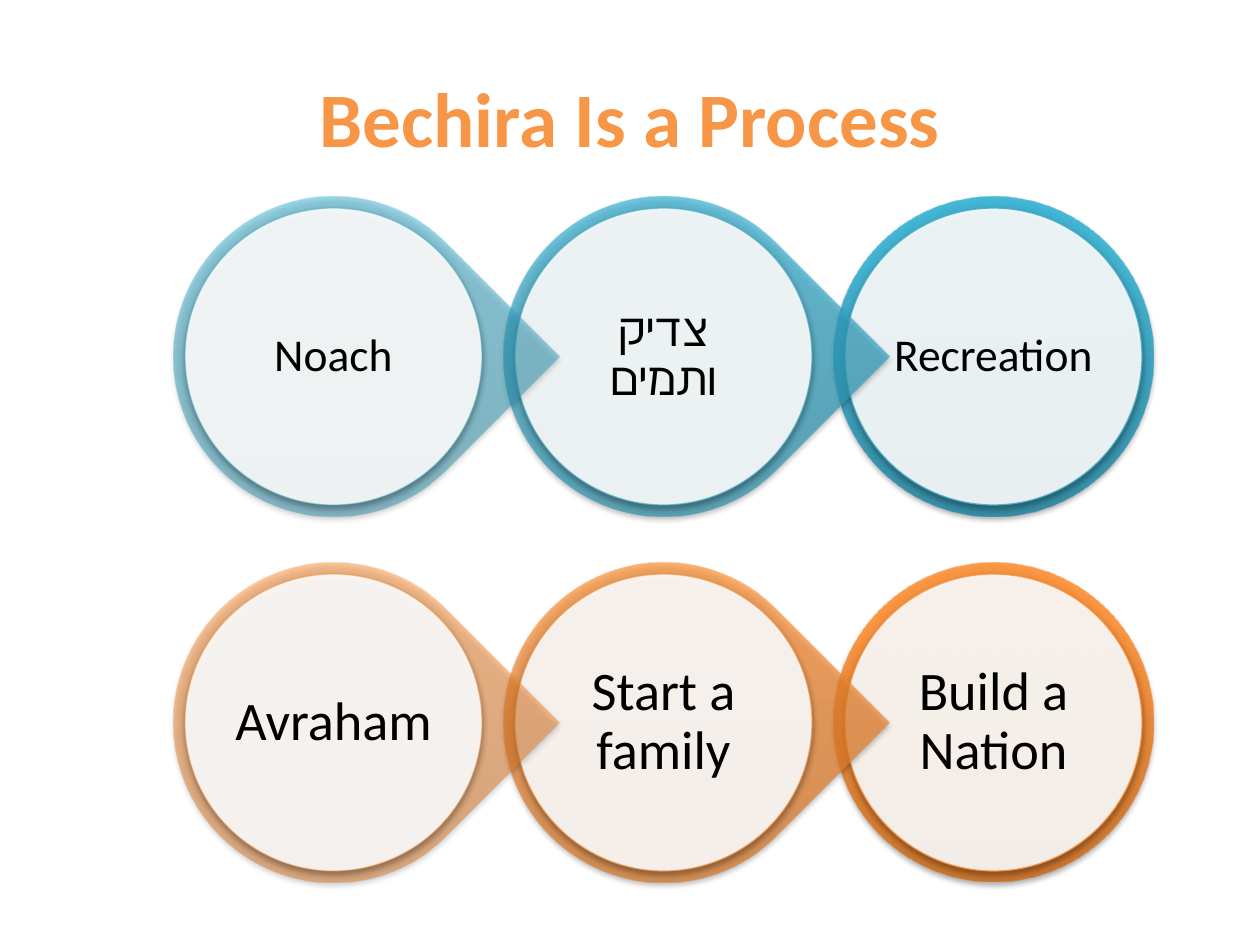
from dataclasses import dataclass

from lxml.etree import SubElement
from pptx import Presentation
from pptx.dml.color import RGBColor
from pptx.enum.shapes import MSO_SHAPE as Shape
from pptx.enum.text import MSO_ANCHOR as Anchor, PP_ALIGN as Align
from pptx.oxml import parse_xml
from pptx.oxml.ns import nsdecls, qn
from pptx.util import Emu, Pt


@dataclass(frozen=True)
class Theme:
    font: str = "Calibri"
    title: str = "F79646"
    text: str = "000000"
    face: str = "FFFFFF"
    title_size: int = 44
    # Line colour, then gradient from bottom to top
    teal: tuple = ("4BACC6", ("2A88A2", "37B1D2", "34B4D6"))
    orange: tuple = ("F79646", ("CC6E20", "FF9034", "FF9136"))


theme = Theme()
SCALE = 914400 / 126  # EMU per px


def box(*lengths):
    return [Emu(round(px * SCALE)) for px in lengths]


def add_shadow(shape):
    shape.shadow.inherit = False
    effects = shape._element.spPr.find(qn("a:effectLst"))
    effects.append(parse_xml(
        f'<a:outerShdw {nsdecls("a")} blurRad="40000" dist="23000" dir="5400000" '
        'rotWithShape="0"><a:srgbClr val="000000"><a:alpha val="35000"/>'
        '</a:srgbClr></a:outerShdw>'))


deck = Presentation()
deck.slide_width, deck.slide_height = box(1260, 945)
slide = deck.slides.add_slide(deck.slide_layouts[5])

# Title
title = slide.shapes.title
title.left, title.top, title.width, title.height = box(63, 38, 1134, 158)
title.text_frame.text = "Bechira Is a Process"
title.text_frame.vertical_anchor = Anchor.MIDDLE
heading = title.text_frame.paragraphs[0]
heading.alignment = Align.CENTER
font = heading.runs[0].font
font.name, font.size, font.bold = theme.font, Pt(theme.title_size), True
font.color.rgb = RGBColor.from_string(theme.title)

# Two processes: top, colours, type size, steps
processes = [
    (197, theme.teal, 26, ["Noach", "צדיק ותמים", "Recreation"]),
    (563, theme.orange, 31, ["Avraham", "Start a family", "Build a Nation"]),
]
LEFT, STEP, RING = 174, 330, 319
FACE_INSET, LABEL_INSET = 11, 53
opacities = [50, 70, 90]

for top, (edge, gradient), size, steps in processes:
    # Later steps lie behind the pointer of the step before
    for index, step in reversed(list(enumerate(steps))):
        left, opacity = LEFT + index * STEP, opacities[index] * 1000
        is_last = index == len(steps) - 1

        # Outer ring, pointing at the next step
        ring = slide.shapes.add_shape(
            Shape.OVAL if is_last else Shape.TEAR, *box(left, top, RING, RING))
        ring.rotation = 0 if is_last else 45
        stops = "".join(
            f'<a:gs pos="{pos}"><a:srgbClr val="{color}"><a:alpha val="{opacity}"/>'
            '</a:srgbClr></a:gs>'
            for pos, color in zip((0, 80000, 100000), gradient))
        ring._element.spPr.insert(2, parse_xml(
            f'<a:gradFill {nsdecls("a")} rotWithShape="0"><a:gsLst>{stops}</a:gsLst>'
            '<a:lin ang="16200000" scaled="0"/></a:gradFill>'))
        ring.line.fill.background()
        add_shadow(ring)

        # White face
        side = RING - 2 * FACE_INSET
        face = slide.shapes.add_shape(
            Shape.OVAL, *box(left + FACE_INSET, top + FACE_INSET, side, side))
        face.fill.solid()
        face.fill.fore_color.rgb = RGBColor.from_string(theme.face)
        face.line.color.rgb = RGBColor.from_string(edge)
        face.line.width = Pt(0.75)
        fill_color, line_color = face._element.spPr.iter(qn("a:srgbClr"))
        SubElement(fill_color, qn("a:alpha"), val="90000")
        SubElement(line_color, qn("a:alpha"), val=str(opacity))
        add_shadow(face)

        # Step name
        side = RING - 2 * LABEL_INSET
        label = slide.shapes.add_textbox(
            *box(left + LABEL_INSET, top + LABEL_INSET, side, side)).text_frame
        label.word_wrap = True
        label.vertical_anchor = Anchor.MIDDLE
        label.margin_left, label.margin_top, label.margin_right, label.margin_bottom = box(5, 5, 5, 5)
        label.text = step
        name = label.paragraphs[0]
        name.alignment = Align.CENTER
        name.line_spacing = 0.9
        if index:
            name._p.get_or_add_pPr().set("rtl", "1")
        font = name.runs[0].font
        font.name, font.size = theme.font, Pt(size)
        font.color.rgb = RGBColor.from_string(theme.text)

deck.save("out.pptx")
